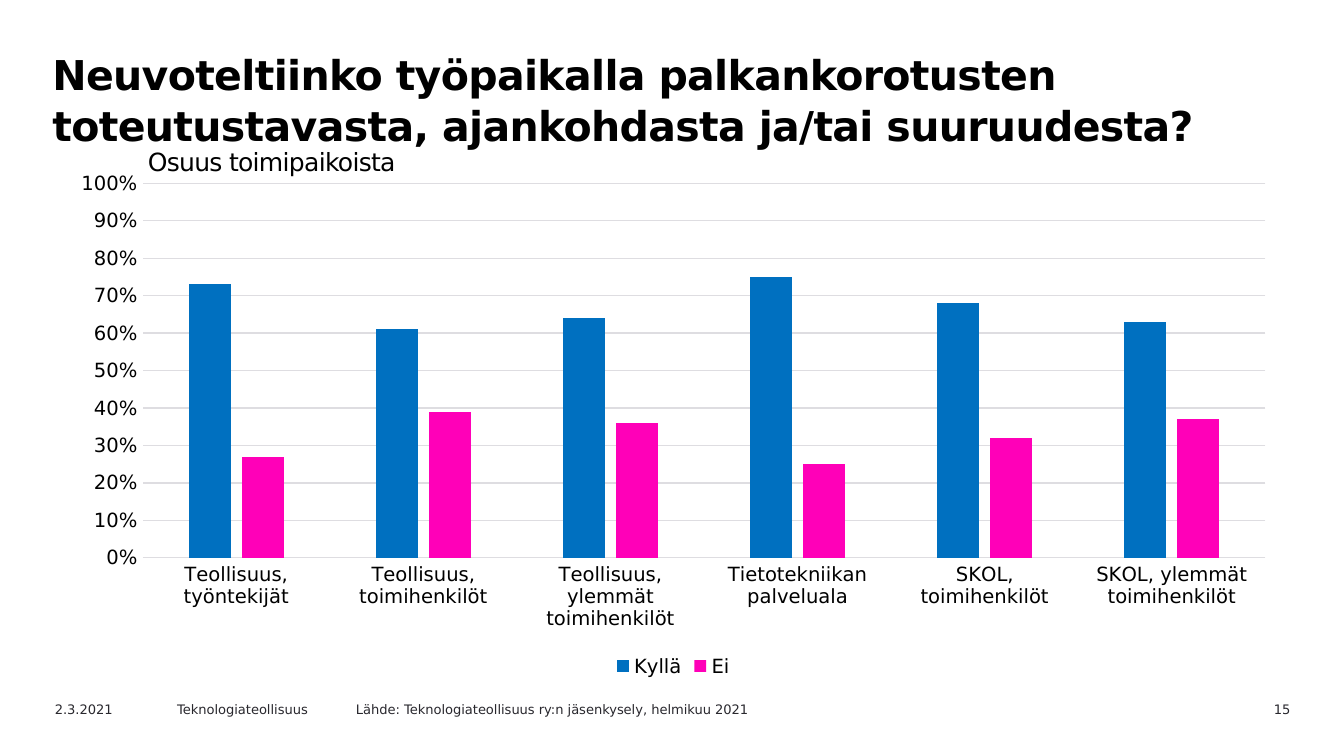
from collections import namedtuple

from lxml import etree
from pptx import Presentation
from pptx import util as u
from pptx.chart.data import CategoryChartData
from pptx.dml.color import RGBColor
from pptx.enum import chart as charts, text
from pptx.oxml import ns

FONT = "DejaVu Sans"
BLACK = RGBColor(0x00, 0x00, 0x00)
INK = RGBColor(0x29, 0x28, 0x2E)
GRID_GREY = RGBColor(0xDE, 0xDD, 0xE1)
BLUE = RGBColor(0x00, 0x70, 0xC0)
PINK = RGBColor(0xFF, 0x00, 0xB8)

PAGE_WIDTH = u.Inches(10)
PAGE_HEIGHT = PAGE_WIDTH * 9 // 16
CELL = PAGE_WIDTH // 100
Box = namedtuple("Box", "left top width height")

CATEGORIES = [
    "Teollisuus, työntekijät",
    "Teollisuus, toimihenkilöt",
    "Teollisuus, ylemmät toimihenkilöt",
    "Tietotekniikan palveluala",
    "SKOL, toimihenkilöt",
    "SKOL, ylemmät toimihenkilöt",
]
SERIES = [
    ("Kyllä", BLUE, [0.73, 0.61, 0.64, 0.75, 0.68, 0.63]),
    ("Ei", PINK, [0.27, 0.39, 0.36, 0.25, 0.32, 0.37]),
]


def grid(columns, rows, wide, high):
    return Box(*(round(cells * CELL) for cells in (columns, rows, wide, high)))


def style(font, size, color, bold=False):
    font.name = FONT
    font.size = u.Pt(size)
    font.bold = bold
    font.color.rgb = color


def write(frame, words, size, color, bold=False, align=text.PP_ALIGN.LEFT, spacing=0):
    frame.word_wrap = True
    frame.auto_size = text.MSO_AUTO_SIZE.NONE
    frame.vertical_anchor = text.MSO_ANCHOR.TOP
    para = frame.paragraphs[0]
    para.alignment = align
    span = para.add_run()
    span.text = words
    if spacing:
        span._r.get_or_add_rPr().set("spc", str(spacing))
    style(para.font, size, color, bold)
    return para


def add_title(page, box):
    title = page.shapes.title
    title.left, title.top, title.width, title.height = box
    title.text_frame.margin_left = u.Inches(0.11)
    para = write(
        title.text_frame,
        "Neuvoteltiinko työpaikalla palkankorotusten toteutustavasta, "
        "ajankohdasta ja/tai suuruudesta?",
        22, BLACK, bold=True, spacing=-35,
    )
    para.line_spacing = u.Pt(27)
    para.space_before = u.Pt(0)


def add_axis_label(page, box):
    frame = page.shapes.add_textbox(*box).text_frame
    frame.margin_left = frame.margin_right = u.Inches(0.04)
    frame.margin_top = frame.margin_bottom = u.Inches(0.04)
    write(frame, "Osuus toimipaikoista", 13.4, BLACK, spacing=-40)


def set_plot_layout(chart, **shares):
    area = chart._chartSpace.chart.plotArea
    for old in area.findall(ns.qn("c:layout")):
        area.remove(old)
    layout = etree.Element(ns.qn("c:layout"))
    manual = etree.SubElement(layout, ns.qn("c:manualLayout"))
    settings = {"layoutTarget": "inner", "xMode": "edge", "yMode": "edge", **shares}
    for tag, value in settings.items():
        etree.SubElement(manual, ns.qn(f"c:{tag}")).set("val", str(value))
    area.insert(0, layout)


def add_share_chart(page, box):
    data = CategoryChartData(number_format="0%")
    data.categories = CATEGORIES
    for name, _, values in SERIES:
        data.add_series(name, values)
    kind = charts.XL_CHART_TYPE.COLUMN_CLUSTERED
    chart = page.shapes.add_chart(kind, *box, data).chart
    style(chart.font, 10, INK)
    chart.has_title = False

    plot = chart.plots[0]
    plot.gap_width = 219
    plot.overlap = -27
    plot.vary_by_categories = False
    for series, (_, color, _) in zip(plot.series, SERIES):
        series.format.fill.solid()
        series.format.fill.fore_color.rgb = color
        series.invert_if_negative = False

    for axis in (chart.category_axis, chart.value_axis):
        axis.major_tick_mark = charts.XL_TICK_MARK.NONE
        axis.minor_tick_mark = charts.XL_TICK_MARK.NONE
        style(axis.tick_labels.font, 10.5, BLACK)

    values = chart.value_axis
    values.minimum_scale, values.maximum_scale, values.major_unit = 0, 1, 0.1
    values.tick_labels.number_format = "0%"
    values.tick_labels.number_format_is_linked = False
    values.format.line.fill.background()
    values.has_major_gridlines = True
    for line in (values.major_gridlines.format.line, chart.category_axis.format.line):
        line.color.rgb = GRID_GREY
        line.width = u.Pt(0.75)

    chart.has_legend = True
    chart.legend.position = charts.XL_LEGEND_POSITION.BOTTOM
    chart.legend.include_in_layout = False
    style(chart.legend.font, 10.5, BLACK)
    set_plot_layout(chart, x=0.07, y=0.04, w=0.91, h=0.72)


def add_footer(page, box):
    left, right = text.PP_ALIGN.LEFT, text.PP_ALIGN.RIGHT
    source = "Lähde: Teknologiateollisuus ry:n jäsenkysely, helmikuu 2021"
    parts = [
        ("2.3.2021", 0, 10, left),
        ("Teknologiateollisuus", 9.1, 14.2, left),
        (source, 22.4, 37.1, left),
        ("15", 84.5, 9.4, right),
    ]
    for words, column, wide, align in parts:
        note = page.shapes.add_textbox(
            box.left + round(column * CELL), box.top, round(wide * CELL), box.height
        )
        write(note.text_frame, words, 7, INK, align=align)


def main():
    deck = Presentation()
    deck.slide_width, deck.slide_height = PAGE_WIDTH, PAGE_HEIGHT
    page = deck.slides.add_slide(deck.slide_layouts.get_by_name("Title Only"))
    add_title(page, grid(2.8, 3.1, 89.8, 7.1))
    add_share_chart(page, grid(4.2, 12.1, 91.8, 38.7))
    add_axis_label(page, grid(10.6, 10.5, 22, 3.1))
    add_footer(page, grid(3.1, 51.7, 93.9, 1.8))
    deck.save("out.pptx")


if __name__ == "__main__":
    main()
